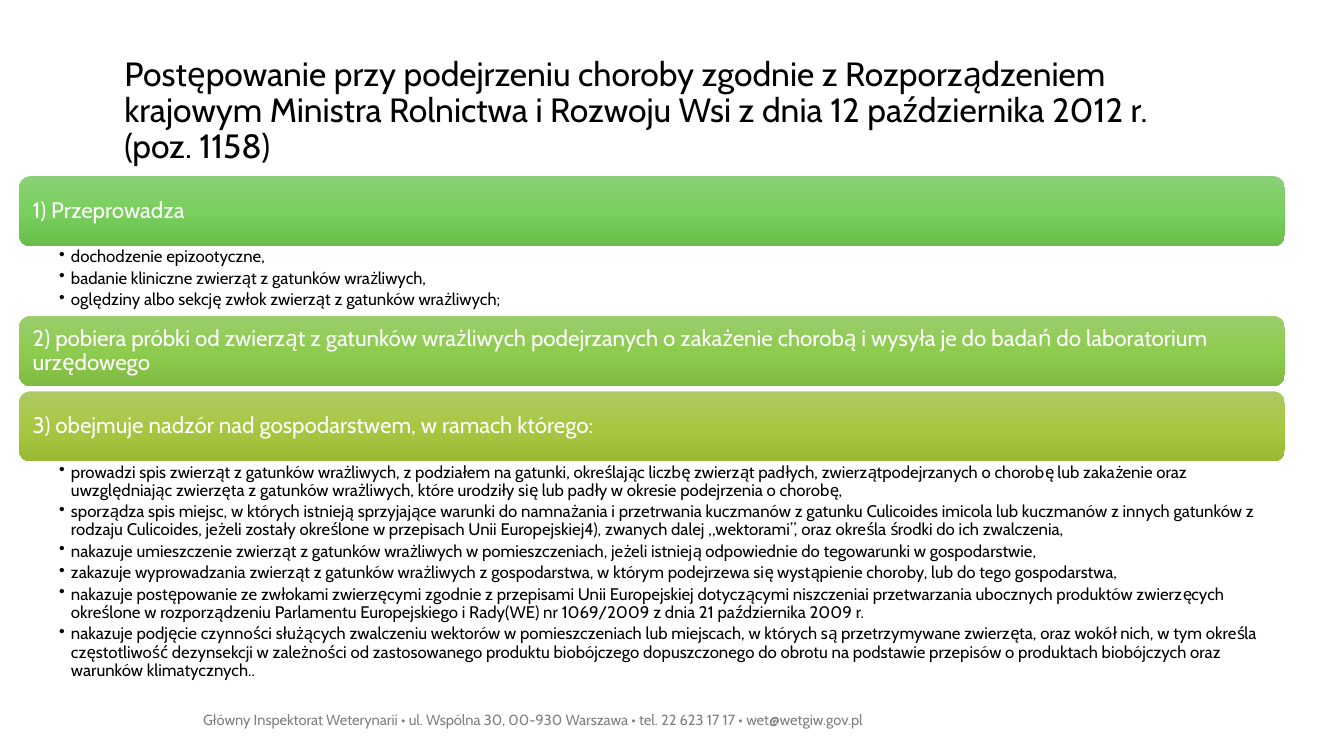
from copy import deepcopy

from lxml import etree
from pptx import Presentation
from pptx import util as u
from pptx.dml import color
from pptx.enum import shapes, text
from pptx.oxml import ns

LEFT, WIDTH = 0.48, 31.9
BAND_HEIGHT = 1.77
TITLE = (
    "Postępowanie przy podejrzeniu choroby zgodnie z Rozporządzeniem krajowym "
    "Ministra Rolnictwa i Rozwoju Wsi z dnia 12 października 2012 r. (poz. 1158)"
)
FOOTER = (
    "Główny Inspektorat Weterynarii • ul. Wspólna 30, 00-930 Warszawa • "
    "tel. 22 623 17 17 • wet@wetgiw.gov.pl"
)
SECTIONS = [
    ("1) Przeprowadza", ("8BD077", "79CF5D", "69BE4C"), 1.75, [
        "dochodzenie epizootyczne,",
        "badanie kliniczne zwierząt z gatunków wrażliwych,",
        "oględziny albo sekcję zwłok zwierząt z gatunków wrażliwych;",
    ]),
    ("2) pobiera próbki od zwierząt z gatunków wrażliwych podejrzanych o zakażenie "
     "chorobą i wysyła je do badań do laboratorium urzędowego",
     ("9BCD6D", "8ECC50", "7FBB41"), 0.13, []),
    ("3) obejmuje nadzór nad gospodarstwem, w ramach którego:",
     ("AFC964", "A8C843", "99B935"), 7.09, [
        "prowadzi spis zwierząt z gatunków wrażliwych, z podziałem na gatunki, "
        "określając liczbę zwierząt padłych, zwierzątpodejrzanych o chorobę lub "
        "zakażenie oraz uwzględniając zwierzęta z gatunków wrażliwych, które "
        "urodziły się lub padły w okresie podejrzenia o chorobę,",
        "sporządza spis miejsc, w których istnieją sprzyjające warunki do "
        "namnażania i przetrwania kuczmanów z gatunku Culicoides imicola lub "
        "kuczmanów z innych gatunków z rodzaju Culicoides, jeżeli zostały określone "
        "w przepisach Unii Europejskiej4), zwanych dalej „wektorami”, oraz określa "
        "środki do ich zwalczenia,",
        "nakazuje umieszczenie zwierząt z gatunków wrażliwych w pomieszczeniach, "
        "jeżeli istnieją odpowiednie do tegowarunki w gospodarstwie,",
        "zakazuje wyprowadzania zwierząt z gatunków wrażliwych z gospodarstwa, w "
        "którym podejrzewa się wystąpienie choroby, lub do tego gospodarstwa,",
        "nakazuje postępowanie ze zwłokami zwierzęcymi zgodnie z przepisami Unii "
        "Europejskiej dotyczącymi niszczeniai przetwarzania ubocznych produktów "
        "zwierzęcych określone w rozporządzeniu Parlamentu Europejskiego i Rady(WE) "
        "nr 1069/2009 z dnia 21 października 2009 r.",
        "nakazuje podjęcie czynności służących zwalczeniu wektorów w "
        "pomieszczeniach lub miejscach, w których są przetrzymywane zwierzęta, oraz "
        "wokół nich, w tym określa częstotliwość dezynsekcji w zależności od "
        "zastosowanego produktu biobójczego dopuszczonego do obrotu na podstawie "
        "przepisów o produktach biobójczych oraz warunków klimatycznych..",
    ]),
]


def rgb(value):
    return color.RGBColor.from_string(value)


class SlideBuilder:
    font = "Cabin"

    def __init__(self, deck):
        self.page = deck.slides.add_slide(deck.slide_layouts[5])

    def style(self, para, size, shade, spacing=0.9):
        para.alignment = text.PP_ALIGN.LEFT
        para.line_spacing = spacing
        para.font.name = self.font
        para.font.size = u.Pt(size)
        para.font.color.rgb = rgb(shade)

    def inset(self, frame, left, top, right, bottom):
        frame.margin_left, frame.margin_top = u.Cm(left), u.Cm(top)
        frame.margin_right, frame.margin_bottom = u.Cm(right), u.Cm(bottom)

    def title(self, words, left, top, width, height):
        box = self.page.shapes.title
        box.left, box.top = u.Cm(left), u.Cm(top)
        box.width, box.height = u.Cm(width), u.Cm(height)
        frame = box.text_frame
        frame.text = words
        frame.auto_size = text.MSO_AUTO_SIZE.NONE
        frame.vertical_anchor = text.MSO_ANCHOR.MIDDLE
        self.style(frame.paragraphs[0], 24, "000000")

    def text_box(self, left, top, width, height):
        box = self.page.shapes.add_textbox(
            u.Cm(left), u.Cm(top), u.Cm(width), u.Cm(height))
        box.text_frame.word_wrap = True
        return box.text_frame

    def footer(self, words, left, top, width, height):
        frame = self.text_box(left, top, width, height)
        frame.text = words
        self.style(frame.paragraphs[0], 10.5, "808080", 1)

    def band(self, words, shades, top):
        band = self.page.shapes.add_shape(
            shapes.MSO_SHAPE.ROUNDED_RECTANGLE,
            u.Cm(LEFT), u.Cm(top), u.Cm(WIDTH), u.Cm(BAND_HEIGHT))
        band.shadow.inherit = False
        band.line.fill.background()
        band.fill.gradient()
        band.fill.gradient_angle = 270
        stops = band._element.xpath(".//a:gsLst")[0]
        stops.append(deepcopy(stops[-1]))
        for stop, shade, position in zip(band.fill.gradient_stops, shades, (0, 0.5, 1)):
            stop.color.rgb = rgb(shade)
            stop.position = position
        frame = band.text_frame
        frame.word_wrap = True
        frame.vertical_anchor = text.MSO_ANCHOR.MIDDLE
        self.inset(frame, 0.26, 0.26, 0.26, 0.26)
        frame.text = words
        self.style(frame.paragraphs[0], 16, "FFFFFF")

    def bullets(self, items, top, height):
        frame = self.text_box(LEFT, top, WIDTH, height)
        self.inset(frame, 1.01, 0.05, 0.3, 0.05)
        frame.text = "\n".join(items)
        for para in frame.paragraphs:
            para.level = 1
            props = para._p.get_or_add_pPr()
            props.set("marL", str(u.Cm(0.3)))
            props.set("indent", str(-u.Cm(0.3)))
            etree.SubElement(props, ns.qn("a:buChar"), char="•")
            para.space_after = u.Pt(2.4)
            self.style(para, 12, "000000")


def main():
    deck = Presentation()
    deck.slide_width, deck.slide_height = u.Cm(33.87), u.Cm(19.05)
    builder = SlideBuilder(deck)
    builder.footer(FOOTER, 4.87, 17.8, 26.67, 1.2)
    builder.title(TITLE, 2.88, 0.76, 27.5, 4.11)
    top = 4.44
    for heading, shades, height, items in SECTIONS:
        builder.band(heading, shades, top)
        top += BAND_HEIGHT
        if items:
            builder.bullets(items, top, height)
        top += height
    deck.save("out.pptx")


if __name__ == "__main__":
    main()
